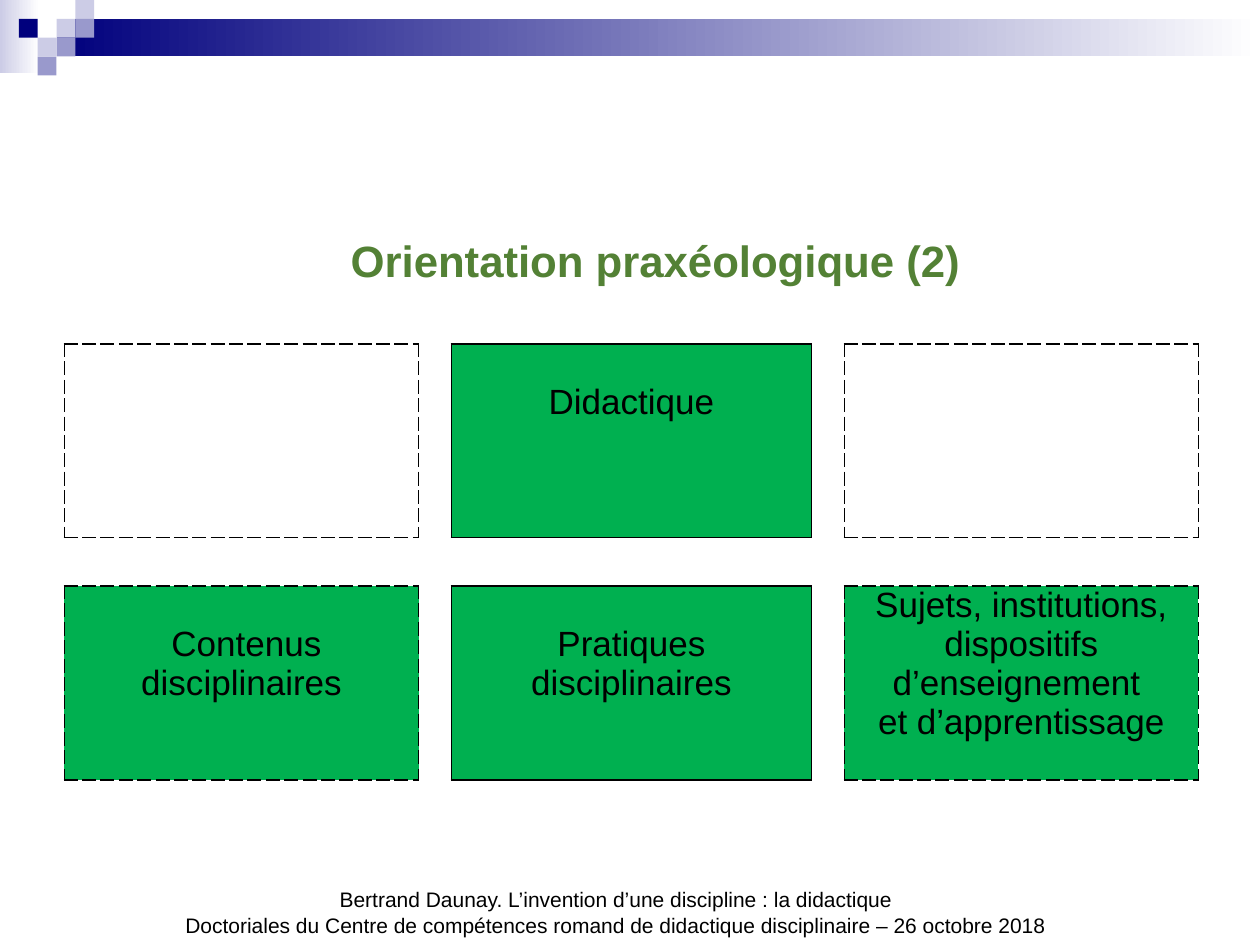
from lxml import etree
from pptx import Presentation
from pptx.dml.color import RGBColor
from pptx.enum.shapes import MSO_SHAPE
from pptx.enum.text import MSO_ANCHOR, MSO_AUTO_SIZE, PP_ALIGN
from pptx.oxml.ns import qn
from pptx.util import Cm, Pt

RECT = MSO_SHAPE.RECTANGLE
LEFT, CENTER = PP_ALIGN.LEFT, PP_ALIGN.CENTER
TOP, MIDDLE, BOTTOM = MSO_ANCHOR.TOP, MSO_ANCHOR.MIDDLE, MSO_ANCHOR.BOTTOM
NO_FIT = MSO_AUTO_SIZE.NONE
NO_STYLE = "{2D5ABB26-0587-4C30-8999-92F81FD0307C}"

NAVY, MAUVE, PALE, WHITE = "00007D", "9999CC", "CCCCE6", "FFFFFF"
GREEN, OLIVE, BLACK = "00B050", "538135", "000000"

UNIT = 0.38  # side of one small square in the banner
SQUARES = [  # column, row, colour
    (2, 1, PALE), (3, 0, PALE), (3, 1, MAUVE), (1, 2, PALE),
    (0, 1, NAVY), (2, 2, MAUVE), (1, 3, MAUVE),
]
COLS = [7.14, 0.66, 7.26, 0.66, 7.14]
ROWS = [3.91, 0.97, 3.91]
LINE = 0.79  # height of one line of table text
BOXES = {  # (row, column): text, space above it
    (0, 0): ("", 0),
    (0, 2): ("Didactique", LINE),
    (0, 4): ("", 0),
    (2, 0): (" Contenus disciplinaires", LINE),
    (2, 2): ("Pratiques disciplinaires", LINE),
    (2, 4): ("Sujets, institutions, dispositifs d’enseignement \vet d’apprentissage", 0),
}
# side, step to the neighbour, side of the neighbour that touches
SIDES = [("L", 0, -1, "R"), ("R", 0, 1, "L"), ("T", -1, 0, "B"), ("B", 1, 0, "T")]


def color(code):
    return RGBColor.from_string(code)


def put(item, values):
    """Set each attribute of item from a dict."""
    for name, value in values.items():
        setattr(item, name, value)


def edge(cell, side, dash):
    """Draw one border of a table cell."""
    props = cell._tc.get_or_add_tcPr()
    line = etree.SubElement(props, qn("a:ln" + side), w=str(Pt(1)))
    fill = etree.SubElement(line, qn("a:solidFill"))
    etree.SubElement(fill, qn("a:srgbClr"), val=BLACK)
    etree.SubElement(line, qn("a:prstDash"), val=dash)


class Deck:
    font = "Arial"

    def __init__(self):
        self.file = Presentation()
        put(self.file, {"slide_width": Cm(25.4), "slide_height": Cm(19.05)})
        self.slide = self.file.slides.add_slide(self.file.slide_layouts[5])
        self.shapes = self.slide.shapes

    def label(self, frame, text, size, tone=BLACK, bold=False, align=CENTER):
        """Set the text of a frame and format its runs."""
        frame.text = text
        for para in frame.paragraphs:
            para.alignment = align
            for run in para.runs:
                put(run.font, {"name": self.font, "size": Pt(size), "bold": bold})
                run.font.color.rgb = color(tone)

    def rect(self, x, y, w, h, *tones):
        """Add a rectangle, plain with one tone or graded with two."""
        shape = self.shapes.add_shape(RECT, Cm(x), Cm(y), Cm(w), Cm(h))
        shape.shadow.inherit = False
        shape.line.fill.background()
        if len(tones) == 1:
            shape.fill.solid()
            shape.fill.fore_color.rgb = color(tones[0])
            return
        shape.fill.gradient()
        shape.fill.gradient_angle = 0
        for place, (stop, tone) in enumerate(zip(shape.fill.gradient_stops, tones)):
            stop.position = place
            stop.color.rgb = color(tone)

    def title(self, text, x, y, w, h):
        shape = self.shapes.title
        put(shape, {"left": Cm(x), "top": Cm(y), "width": Cm(w), "height": Cm(h)})
        put(shape.text_frame, {
            "margin_left": Cm(0.97), "word_wrap": True,
            "auto_size": NO_FIT, "vertical_anchor": MIDDLE,
        })
        self.label(shape.text_frame, text, 25, OLIVE, True, LEFT)

    def note(self, text, x, y, w, h):
        box = self.shapes.add_textbox(Cm(x), Cm(y), Cm(w), Cm(h))
        put(box.text_frame, {"word_wrap": True, "vertical_anchor": BOTTOM})
        self.label(box.text_frame, text, 12)

    def table(self, x, y):
        holder = self.shapes.add_table(
            len(ROWS), len(COLS), Cm(x), Cm(y), Cm(sum(COLS)), Cm(sum(ROWS)))
        grid = holder.table
        put(grid, {"first_row": False, "horz_banding": False})
        grid._tbl.tblPr.find(qn("a:tableStyleId")).text = NO_STYLE
        for col, width in zip(grid.columns, COLS):
            col.width = Cm(width)
        for row, height in zip(grid.rows, ROWS):
            row.height = Cm(height)
        for row, col in BOXES:
            self.frame(grid, row, col)
        for cell in grid.iter_cells():
            put(cell, {"margin_top": 0, "margin_bottom": 0})
            cell.fill.background()
        for (row, col), (text, space) in BOXES.items():
            if text:
                self.fill(grid.cell(row, col), text, space)

    def frame(self, grid, row, col):
        """Border a box, and the cells that share its sides."""
        dash = "solid" if col == 2 else "dash"
        for side, down, right, back in SIDES:
            edge(grid.cell(row, col), side, dash)
            near_row, near_col = row + down, col + right
            if 0 <= near_row < len(ROWS) and 0 <= near_col < len(COLS):
                edge(grid.cell(near_row, near_col), back, dash)

    def fill(self, cell, text, space):
        cell.fill.solid()
        cell.fill.fore_color.rgb = color(GREEN)
        put(cell, {
            "margin_left": Cm(0.18), "margin_right": Cm(0.18),
            "margin_top": Cm(space), "vertical_anchor": TOP,
        })
        self.label(cell.text_frame, text, 20)


def main():
    deck = Deck()
    deck.rect(0, 0, 0.79, 1.47, PALE, WHITE)
    deck.rect(3 * UNIT, UNIT, 24.26, 2 * UNIT, NAVY, WHITE)
    for col, row, tone in SQUARES:
        deck.rect((col + 1) * UNIT, row * UNIT, UNIT, UNIT, tone)
    deck.table(1.3, 6.93)
    deck.note(
        "Bertrand Daunay. L’invention d’une discipline : la didactique\n"
        "Doctoriales du Centre de compétences romand de didactique"
        " disciplinaire – 26 octobre 2018",
        0.71, 17.75, 23.42, 1.27)
    deck.title("Orientation praxéologique (2)", 6.1, 4.52, 19.3, 1.46)
    deck.file.save("out.pptx")


if __name__ == "__main__":
    main()
